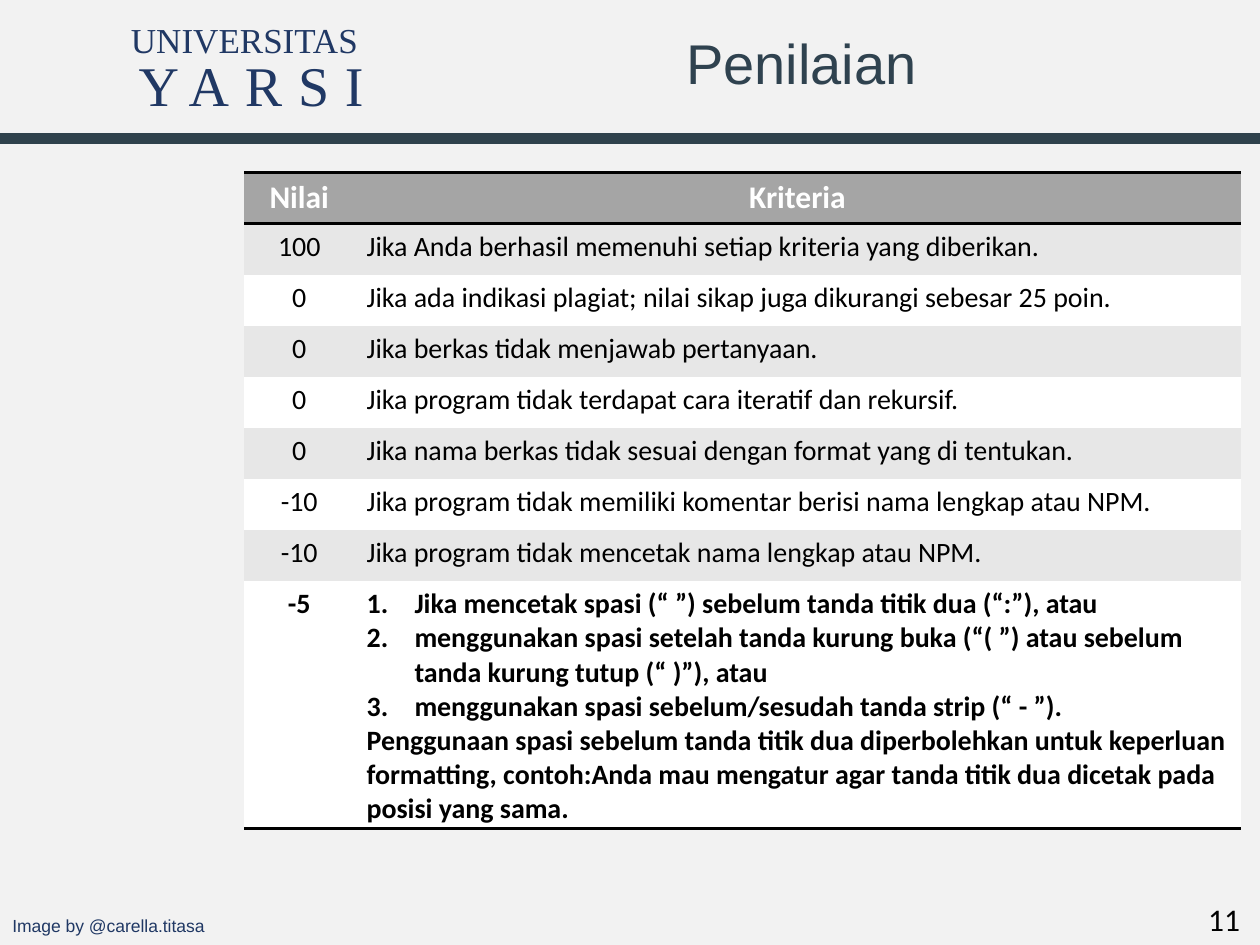
import pptx
import pptx.dml.color
import pptx.enum.shapes
import pptx.enum.text
import pptx.oxml
import pptx.oxml.ns
import pptx.util

Inches = pptx.util.Inches
Pt = pptx.util.Pt
ALIGN = pptx.enum.text.PP_ALIGN
ANCHOR = pptx.enum.text.MSO_ANCHOR

HUES = {
    "page": "F2F2F2", "rule": "2F424C", "title": "2F424F", "navy": "203864",
    "ink": "000000", "white": "FFFFFF", "head": "A5A5A5", "band": "E7E7E7",
}
PLAIN = "{2D5ABB26-0587-4C30-8999-92F81FD0307C}"
MARKS = [
    ("100", "Jika Anda berhasil memenuhi setiap kriteria yang diberikan."),
    ("0", "Jika ada indikasi plagiat; nilai sikap juga dikurangi sebesar 25 poin."),
    ("0", "Jika berkas tidak menjawab pertanyaan."),
    ("0", "Jika program tidak terdapat cara iteratif dan rekursif."),
    ("0", "Jika nama berkas tidak sesuai dengan format yang di tentukan."),
    ("-10", "Jika program tidak memiliki komentar berisi nama lengkap atau NPM."),
    ("-10", "Jika program tidak mencetak nama lengkap atau NPM."),
]
STEPS = [
    "Jika mencetak spasi (“ ”) sebelum tanda titik dua (“:”), atau",
    "menggunakan spasi setelah tanda kurung buka (“( ”) atau sebelum "
    "tanda kurung tutup (“ )”), atau",
    "menggunakan spasi sebelum/sesudah tanda strip (“ - ”).",
]
NOTE = (
    "Penggunaan spasi sebelum tanda titik dua diperbolehkan untuk keperluan "
    "formatting, contoh:Anda mau mengatur agar tanda titik dua dicetak pada "
    "posisi yang sama."
)


def color(name):
    """Return the named colour."""
    return pptx.dml.color.RGBColor.from_string(HUES[name])


def style(frame, size, face, hue, align=ALIGN.LEFT, bold=False):
    """Format all text of a frame."""
    for para in frame.paragraphs:
        para.alignment = align
        for run in para.runs:
            font = run.font
            font.size, font.name, font.bold = Pt(size), face, bold
            font.color.rgb = color(hue)


def add_label(slide, text, box, size, face, hue, align=ALIGN.LEFT, wrap=False, gap=0):
    """Add a text box, with letter spacing in points if asked."""
    frame = slide.shapes.add_textbox(*map(Inches, box)).text_frame
    frame.text = text
    frame.word_wrap = wrap
    style(frame, size, face, hue, align)
    if gap:
        frame.paragraphs[0].runs[0].font._element.set("spc", str(gap * 100))


def add_rule(slide, top, width):
    """Draw a rule across the slide."""
    line = slide.shapes.add_connector(
        pptx.enum.shapes.MSO_CONNECTOR.STRAIGHT, 0, Inches(top), Inches(10), Inches(top))
    line.line.color.rgb = color("rule")
    line.line.width = Pt(width)
    line.element.spPr.append(pptx.oxml.parse_xml(
        f"<a:effectLst {pptx.oxml.ns.nsdecls('a')}/>"))


def set_title(slide, text):
    """Place and format the title."""
    title = slide.shapes.title
    title.left, title.top = Inches(3.24), Inches(0.23)
    title.width, title.height = Inches(6.24), Inches(0.6)
    frame = title.text_frame
    frame.text = text
    frame.vertical_anchor = ANCHOR.MIDDLE
    frame.paragraphs[0].line_spacing = 0.9
    style(frame, 32, "Arial", "title", ALIGN.CENTER)


def add_edge(cell, side):
    """Give one side of a cell a black border."""
    cell._tc.get_or_add_tcPr().append(pptx.oxml.parse_xml(
        f'<a:ln{side} {pptx.oxml.ns.nsdecls("a")} w="25400"><a:solidFill>'
        f'<a:srgbClr val="{HUES["ink"]}"/></a:solidFill></a:ln{side}>'))


def number(para):
    """Make a paragraph a numbered item."""
    props = para._p.get_or_add_pPr()
    props.set("marL", str(Inches(0.38)))
    props.set("indent", str(-Inches(0.38)))
    props.append(pptx.oxml.parse_xml(
        f'<a:buAutoNum {pptx.oxml.ns.nsdecls("a")} type="arabicPeriod"/>'))


def add_marks(slide):
    """Add the table of marks and criteria."""
    rows = [("Nilai", "Kriteria"), *MARKS, ("-5", "\n".join([*STEPS, NOTE]))]
    last = len(rows) - 1
    shape = slide.shapes.add_table(
        len(rows), 2, *map(Inches, (1.94, 1.37, 7.91, 5.21)))
    table = shape.table
    next(shape.element.iter(pptx.oxml.ns.qn("a:tableStyleId"))).text = PLAIN
    table.columns[0].width, table.columns[1].width = Inches(0.87), Inches(7.04)
    for i, row in enumerate(rows):
        table.rows[i].height = Inches(1.97 if i == last else 0.405)
        fill = "head" if i == 0 else "band" if i % 2 else "white"
        for j, text in enumerate(row):
            cell = table.cell(i, j)
            cell.text_frame.text = text
            for side in {0: "TB", last: "B"}.get(i, ""):
                add_edge(cell, side)
            cell.fill.solid()
            cell.fill.fore_color.rgb = color(fill)
            align = ALIGN.LEFT if i and j else ALIGN.CENTER
            style(cell.text_frame, 16 if i else 18, "Calibri",
                  "ink" if i else "white", align, i in (0, last))
    for para in table.cell(last, 1).text_frame.paragraphs[:len(STEPS)]:
        number(para)


def main():
    """Build and save the slide."""
    deck = pptx.Presentation()
    deck.slide_width, deck.slide_height = Inches(10), Inches(7.5)
    slide = deck.slides.add_slide(deck.slide_layouts[5])
    slide.background.fill.solid()
    slide.background.fill.fore_color.rgb = color("page")
    add_label(slide, "11", (9.49, 7.09, 0.5, 0.4), 18, "Calibri", "ink")
    add_label(slide, "UNIVERSITAS", (0.93, 0.1, 2.02, 0.44), 20,
              "Times New Roman", "navy", ALIGN.CENTER)
    add_label(slide, "YARSI", (0.93, 0.35, 2.13, 0.64), 32,
              "Times New Roman", "navy", ALIGN.CENTER, gap=9)
    add_rule(slide, 1.1, 6)
    add_label(slide, "Image by @carella.titasa", (0, 7.21, 1.97, 0.27), 10,
              "Arial", "navy", wrap=True)
    set_title(slide, "Penilaian")
    add_marks(slide)
    deck.save("out.pptx")


if __name__ == "__main__":
    main()
